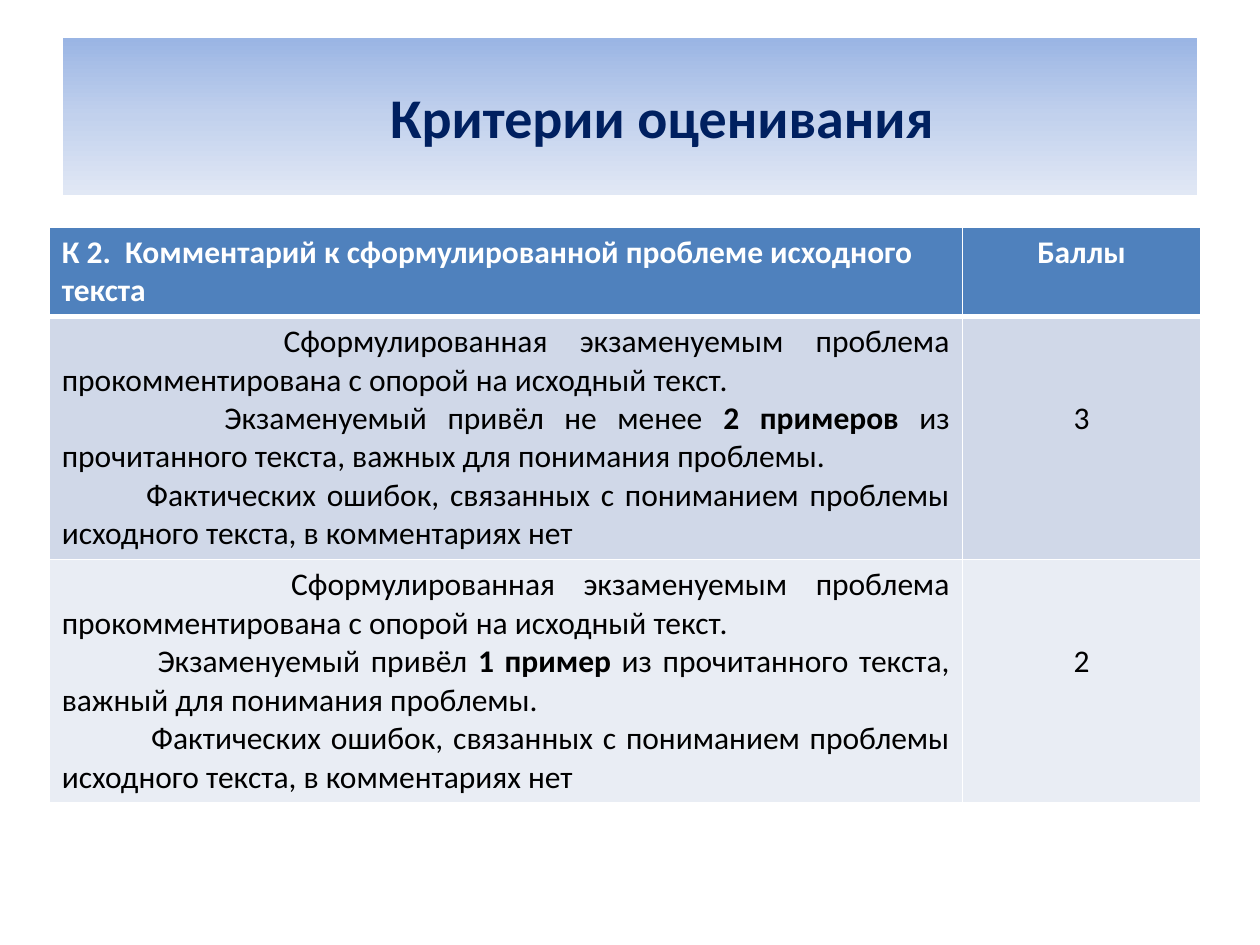
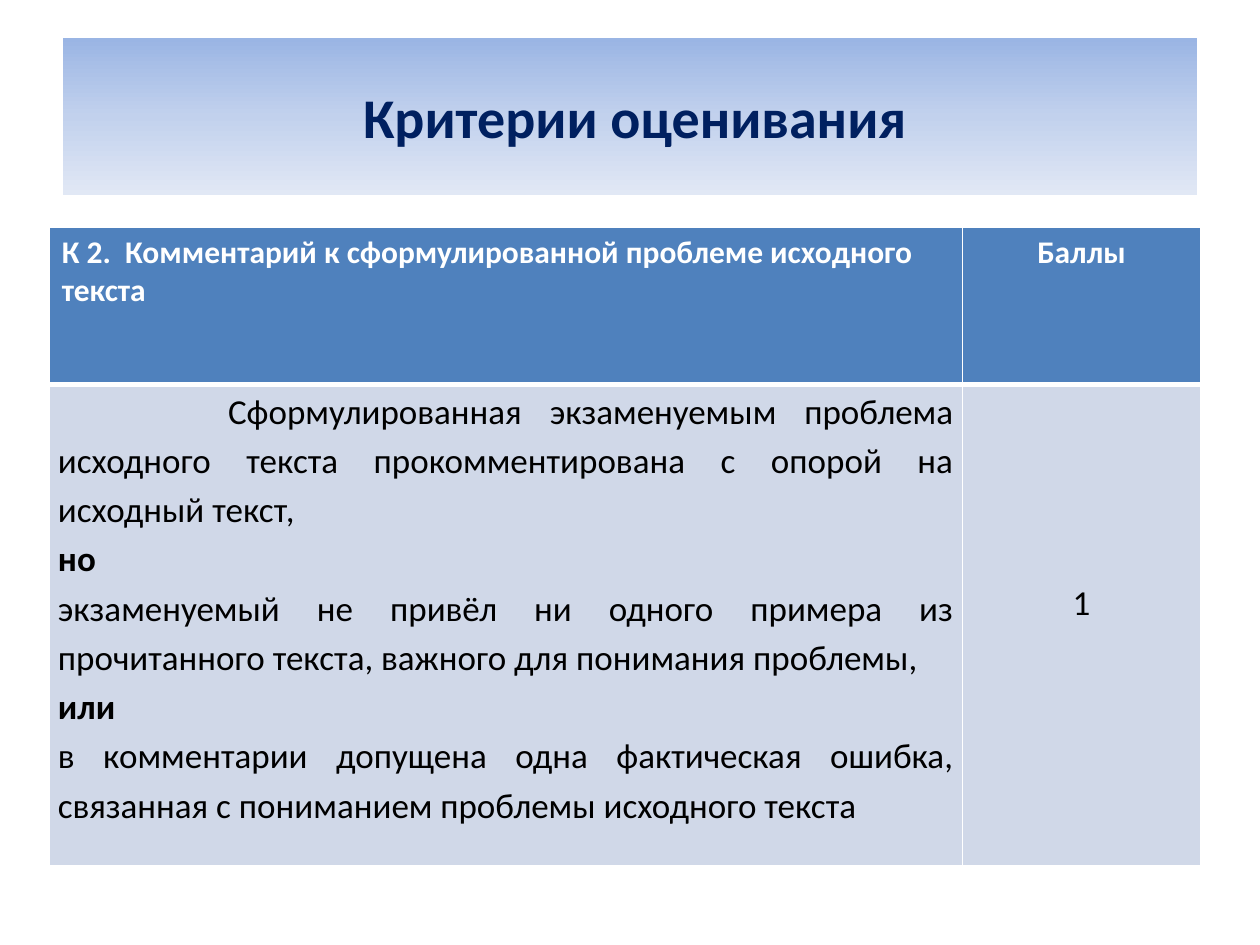
from copy import deepcopy

from lxml import etree
from pptx import Presentation
from pptx import util as u
from pptx.dml.color import RGBColor
from pptx.enum import shapes, text
from pptx.oxml.ns import qn

WIDTH, HEIGHT = u.Inches(10), u.Inches(7.5)
COLORS = {
    "band_top": "9AB5E4", "band_middle": "C2D1ED", "band_bottom": "E1E8F5",
    "title": "002060", "header": "4F81BD", "odd_row": "D0D8E8",
    "even_row": "E9EDF4", "white": "FFFFFF", "black": "000000",
}
FONT = "Calibri"
LEFT, CENTER, JUSTIFY = text.PP_ALIGN.LEFT, text.PP_ALIGN.CENTER, text.PP_ALIGN.JUSTIFY
TITLE_BOX = (0.05, 0.04, 0.9, 1 / 6)
TABLE_BOX = (0.039, 0.24, 0.914)
COLUMN_SHARES = (0.793, 0.207)
TITLE = "Критерии оценивания"
HEADER = ("К 2.  Комментарий к сформулированной проблеме исходного текста", "Баллы")
COMMENTED = "Сформулированная экзаменуемым проблема прокомментирована с опорой на исходный текст."
NO_ERRORS = "Фактических ошибок, связанных с пониманием проблемы исходного текста, в комментариях нет"


def rgb(name):
    return RGBColor.from_string(COLORS[name])


def write(frame, paragraphs, size=18, color="black", bold=False, align=LEFT, spacing=None):
    frame.word_wrap = True
    for index, (indent, content) in enumerate(paragraphs):
        paragraph = frame.add_paragraph() if index else frame.paragraphs[0]
        paragraph.alignment = align
        if spacing:
            paragraph.line_spacing = spacing
        if indent:
            properties = paragraph._p.get_or_add_pPr()
            properties.set("marL", "0")
            properties.set("indent", str(u.Inches(indent)))
        for part, piece in enumerate(content.split("*")):
            if piece:
                run = paragraph.add_run()
                run.text = piece
                run.font.name = FONT
                run.font.size = u.Pt(size)
                run.font.bold = bold or part % 2 == 1
                run.font.color.rgb = rgb(color)


def add_title_band(slide, box, inset):
    left, top, width, height = box
    band = slide.shapes.add_shape(
        shapes.MSO_SHAPE.RECTANGLE, int(left * WIDTH), int(top * HEIGHT),
        int(width * WIDTH), int(height * HEIGHT))
    band.shadow.inherit = False
    band.line.fill.background()
    band.fill.gradient()
    band.fill.gradient_angle = 270
    stops = band._element.spPr.find(qn("a:gradFill")).find(qn("a:gsLst"))
    stops.insert(1, deepcopy(stops[0]))
    shades = ("band_top", "band_middle", "band_bottom")
    for index, (stop, shade) in enumerate(zip(band.fill.gradient_stops, shades)):
        stop.position = index / 2
        stop.color.rgb = rgb(shade)
    band.text_frame.margin_left = u.Inches(0.1 + inset)
    band.text_frame.vertical_anchor = text.MSO_ANCHOR.MIDDLE
    write(band.text_frame, [(0, TITLE)], size=32, color="title", bold=True, align=CENTER)


def style_cell(cell, fill, top, bottom):
    properties = cell._tc.get_or_add_tcPr()
    for side, points in (("L", 1), ("R", 1), ("T", top), ("B", bottom)):
        line = etree.SubElement(properties, qn(f"a:ln{side}"), w=str(u.Pt(points)))
        solid = etree.SubElement(line, qn("a:solidFill"))
        etree.SubElement(solid, qn("a:srgbClr"), val=COLORS["white"])
    cell.fill.solid()
    cell.fill.fore_color.rgb = rgb(fill)


def add_criteria_table(slide, box, heights, criteria, score_offset,
                       size=18, spacing=None, margins=None):
    left, top, width = box
    table = slide.shapes.add_table(
        len(heights), len(COLUMN_SHARES), int(left * WIDTH), int(top * HEIGHT),
        int(width * WIDTH), int(sum(heights) * HEIGHT)).table
    for column, share in zip(table.columns, COLUMN_SHARES):
        column.width = int(share * width * WIDTH)
    for index, height in enumerate(heights):
        table.rows[index].height = int(height * HEIGHT)
        fill = "header" if index == 0 else ("even_row", "odd_row")[index % 2]
        for cell in table.rows[index].cells:
            style_cell(cell, fill, 3 if index == 1 else 1, 3 if index == 0 else 1)
    for column, (label, align) in enumerate(zip(HEADER, (LEFT, CENTER))):
        write(table.cell(0, column).text_frame, [(0, label)],
              color="white", bold=True, align=align)
    for index, (score, paragraphs) in enumerate(criteria, start=1):
        criterion, points = table.rows[index].cells
        if margins:
            criterion.margin_left = criterion.margin_right = u.Inches(margins[0])
            criterion.margin_top = criterion.margin_bottom = u.Inches(margins[1])
        write(criterion.text_frame, paragraphs, size=size, align=JUSTIFY, spacing=spacing)
        points.margin_top = u.Inches(score_offset)
        write(points.text_frame, [(0, score)], size=size, align=CENTER)


def add_criteria_slide(deck, title_inset, **table):
    slide = deck.slides.add_slide(deck.slide_layouts[6])
    add_title_band(slide, TITLE_BOX, title_inset)
    add_criteria_table(slide, TABLE_BOX, **table)


def main():
    deck = Presentation()
    deck.slide_width, deck.slide_height = WIDTH, HEIGHT
    add_criteria_slide(
        deck, 0.51, heights=(0.094, 0.257, 0.257), score_offset=0.66,
        criteria=[
            ("3", [
                (1.76, COMMENTED),
                (1.29, "Экзаменуемый привёл не менее *2 примеров* из прочитанного текста, "
                       "важных для понимания проблемы."),
                (0.67, NO_ERRORS)]),
            ("2", [
                (1.82, COMMENTED),
                (0.76, "Экзаменуемый привёл *1 пример* из прочитанного текста, "
                       "важный для понимания проблемы."),
                (0.71, NO_ERRORS)]),
        ])
    add_criteria_slide(
        deck, 0.08, heights=(1 / 6, 0.51), score_offset=1.57,
        size=20, spacing=1.15, margins=(0.07, 0),
        criteria=[
            ("1", [
                (1.35, "Сформулированная экзаменуемым проблема исходного текста "
                       "прокомментирована с опорой на исходный текст,"),
                (0, "*но*"),
                (0, "экзаменуемый не привёл ни одного примера из прочитанного текста, "
                    "важного для понимания проблемы,"),
                (0, "*или*"),
                (0, "в комментарии допущена одна фактическая ошибка, "
                    "связанная с пониманием проблемы исходного текста")]),
        ])
    deck.save("out.pptx")


if __name__ == "__main__":
    main()
